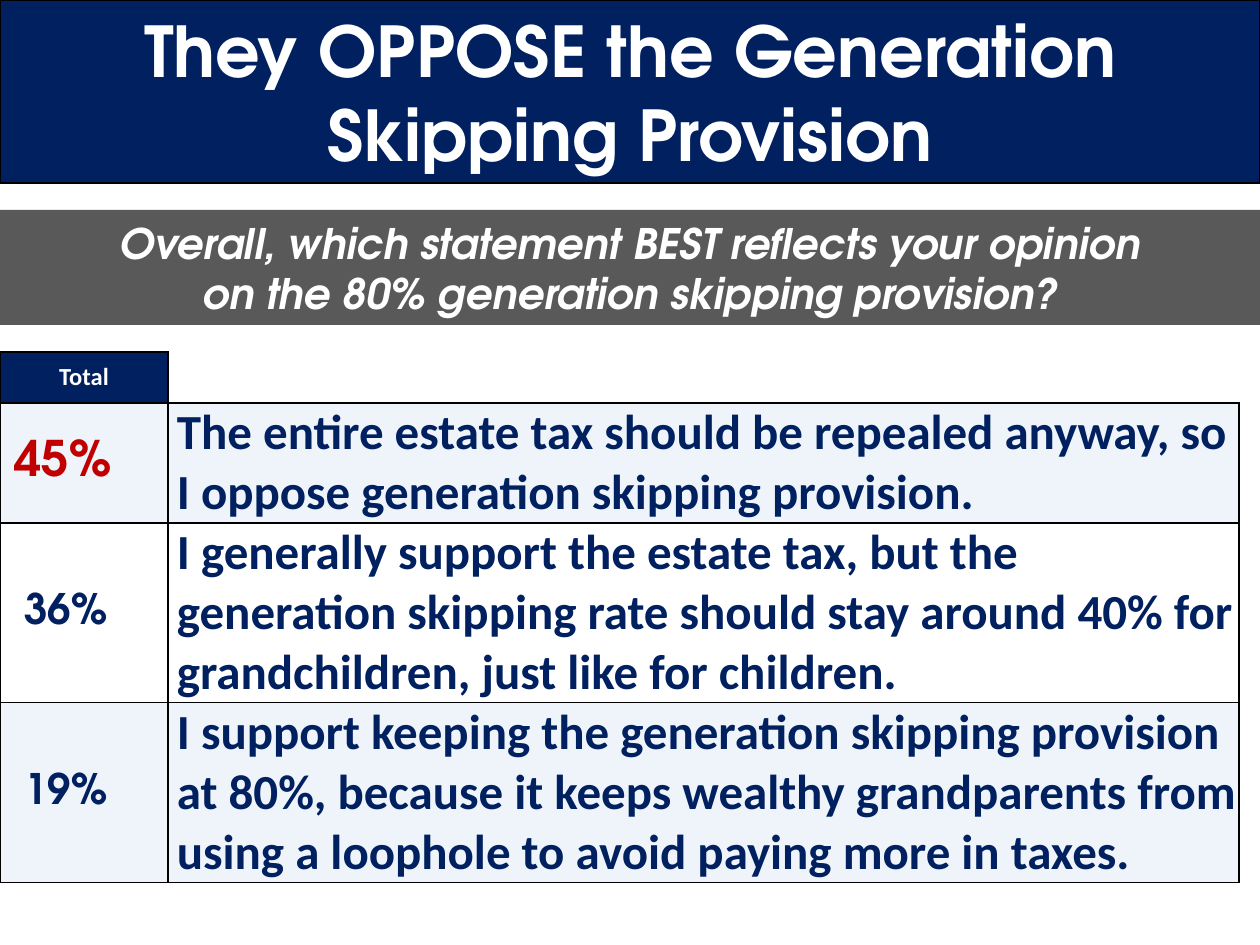
from dataclasses import dataclass

from lxml.etree import SubElement
from pptx import Presentation
from pptx.dml.color import RGBColor as RGB
from pptx.enum.shapes import MSO_SHAPE as SHAPE
from pptx.enum.text import MSO_ANCHOR as ANCHOR, MSO_AUTO_SIZE as AUTO, PP_ALIGN as ALIGN
from pptx.oxml import parse_xml
from pptx.oxml.ns import nsdecls, qn
from pptx.util import Pt

PX = 914400 // 126


@dataclass(frozen=True)
class Theme:
    navy: str = "002060"
    grey: str = "595959"
    white: str = "FFFFFF"
    black: str = "000000"
    red: str = "C00000"
    pale: str = "DEEBF7"
    display: str = "TeX Gyre Adventor"
    body: str = "Calibri"
    title: int = 40
    large: int = 28
    medium: int = 24
    small: int = 14


class Deck:
    def __init__(self, theme, width, height):
        self.theme = theme
        self.prs = Presentation()
        self.prs.slide_width, self.prs.slide_height = width * PX, height * PX
        self.s = self.prs.slides.add_slide(self.prs.slide_layouts[5])

    def set_text(self, tf, text, size, color, font, align=ALIGN.CENTER, italic=False):
        tf.text = text
        tf.word_wrap = True
        for p in tf.paragraphs:
            p.alignment = align
            for r in p.runs:
                r.font.size, r.font.name = Pt(size), font
                r.font.bold, r.font.italic = True, italic
                r.font.color.rgb = RGB.from_string(color)

    def paint(self, sp, color):
        sp.fill.solid()
        sp.fill.fore_color.rgb = RGB.from_string(color)

    def title(self, text, x, y, w, h):
        t, sp = self.theme, self.s.shapes.title
        sp.left, sp.top, sp.width, sp.height = (v * PX for v in (x, y, w, h))
        self.paint(sp, t.navy)
        sp.line.color.rgb = RGB.from_string(t.black)
        sp.line.width = Pt(0.75)
        self.set_text(sp.text_frame, text, t.title, t.white, t.display)
        sp.text_frame.auto_size = AUTO.NONE
        sp.text_frame.vertical_anchor = ANCHOR.MIDDLE

    def banner(self, text, x, y, w, h):
        t = self.theme
        sp = self.s.shapes.add_shape(SHAPE.RECTANGLE, *(v * PX for v in (x, y, w, h)))
        sp.shadow.inherit = False
        self.paint(sp, t.grey)
        sp.line.fill.background()
        self.set_text(sp.text_frame, text, t.medium, t.white, t.display, italic=True)
        sp.text_frame.vertical_anchor = ANCHOR.MIDDLE

    def table(self, x, y, cols, rows):
        frame = self.s.shapes.add_table(
            len(rows), len(cols), x * PX, y * PX, sum(cols) * PX, sum(rows) * PX)
        tb = frame.table
        tb.first_row = tb.horz_banding = False
        for col, w in zip(tb.columns, cols):
            col.width = w * PX
        for row, h in zip(tb.rows, rows):
            row.height = h * PX
        return tb

    def borders(self, cell, sides):
        tc_pr = cell._tc.get_or_add_tcPr()
        for i, side in enumerate(sides):
            tc_pr.insert(i, parse_xml(
                f'<a:ln{side} {nsdecls("a")} w="12700"><a:solidFill>'
                f'<a:srgbClr val="{self.theme.black}"/></a:solidFill></a:ln{side}>'))

    def cell(self, cell, text, size, color, font, fill, margins,
             align=ALIGN.CENTER, clear=False):
        self.set_text(cell.text_frame, text, size, color, font, align)
        cell.vertical_anchor = ANCHOR.MIDDLE
        (cell.margin_left, cell.margin_top,
         cell.margin_right, cell.margin_bottom) = (m * PX for m in margins)
        self.paint(cell, fill)
        if clear:
            rgb = next(cell._tc.tcPr.iter(qn("a:srgbClr")))
            SubElement(rgb, qn("a:alpha")).set("val", "50000")
        self.borders(cell, "LRTB")


def main():
    t = Theme()
    deck = Deck(t, 1260, 945)
    deck.title("They OPPOSE the Generation Skipping Provision", 0, 0, 1260, 183)

    answers = [
        ("45%", "The entire estate tax should be repealed anyway, so "
                "I oppose generation skipping provision.", t.large, t.red, t.pale, 51),
        ("36%", "I generally support the estate tax, but the generation skipping rate "
                "should stay around 40% for grandchildren, just like for children.",
         t.medium, t.navy, t.white, 45),
        ("19%", "I support keeping the generation skipping provision at 80%, because it "
                "keeps wealthy grandparents from using a loophole to avoid paying more "
                "in taxes.", t.medium, t.navy, t.pale, 45),
    ]
    tb = deck.table(0, 352, [168, 1071], [50, 118, 177, 176])
    deck.cell(tb.cell(0, 0), "Total", t.small, t.white, t.body, t.navy, (13, 6, 13, 6))
    corner = tb.cell(0, 1)
    corner.fill.background()
    deck.borders(corner, "LB")
    for i, (share, statement, size, color, fill, indent) in enumerate(answers, 1):
        deck.cell(tb.cell(i, 0), share, size, color, t.display, fill,
                  (9, 0, indent, 0), clear=True)
        deck.cell(tb.cell(i, 1), statement, t.large, t.navy, t.body, fill,
                  (9, 0, 0, 0), ALIGN.LEFT, clear=True)

    deck.banner("Overall, which statement BEST reflects your opinion\n"
                "on the 80% generation skipping provision?", 0, 210, 1260, 115)
    deck.prs.save("out.pptx")


if __name__ == "__main__":
    main()
